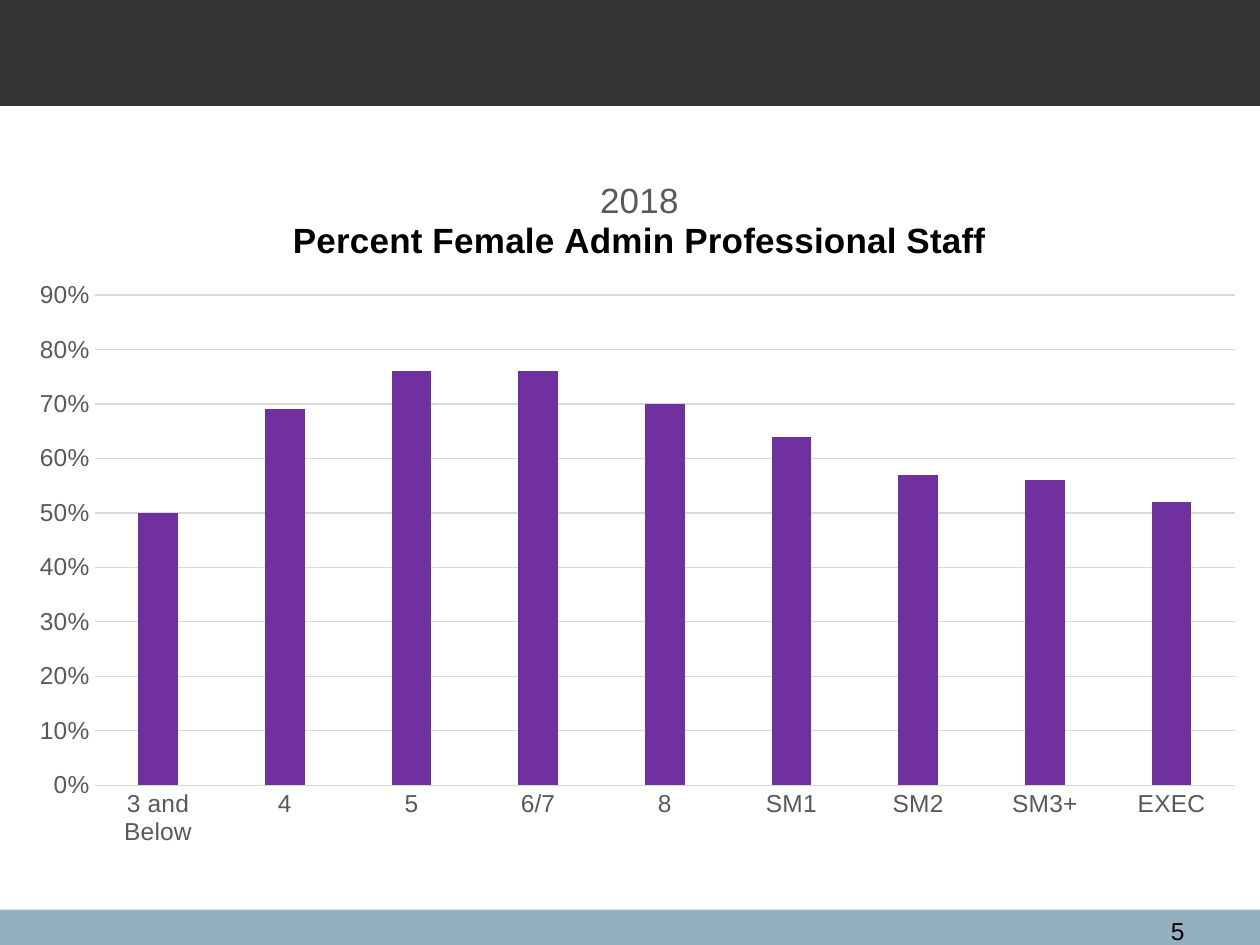
import pptx
import pptx.chart.data
import pptx.dml.color
import pptx.enum.chart
import pptx.enum.shapes
import pptx.enum.text
import pptx.oxml
import pptx.oxml.ns
import pptx.util
from pptx.util import Inches

COLORS = {
    "band": "333333",
    "footer": "94B0BE",
    "paper": "FFFFFF",
    "text": "000000",
    "muted": "595959",
    "grid": "D9D9D9",
    "bar": "7030A0",
}
FONT = "Arial"
STAFF_SHARES = {
    "3 and Below": 0.5,
    "4": 0.69,
    "5": 0.76,
    "6/7": 0.76,
    "8": 0.7,
    "SM1": 0.64,
    "SM2": 0.57,
    "SM3+": 0.56,
    "EXEC": 0.52,
}


def color(name):
    return pptx.dml.color.RGBColor.from_string(COLORS[name])


def set_values(target, values):
    for name, value in values.items():
        setattr(target, name, value)


def format_font(font, size, color_name, bold=False):
    set_values(font, {"name": FONT, "size": pptx.util.Pt(size), "bold": bold})
    font.color.rgb = color(color_name)


def format_line(line):
    line.color.rgb = color("grid")
    line.width = pptx.util.Pt(0.75)


def add_band(page, box, color_name):
    band = page.shapes.add_shape(pptx.enum.shapes.MSO_SHAPE.RECTANGLE, *box)
    band.shadow.inherit = False
    band.fill.solid()
    band.fill.fore_color.rgb = color(color_name)
    band.line.fill.background()


def add_page_number(page, box, number):
    frame = page.shapes.add_textbox(*box).text_frame
    frame.word_wrap = True
    para = frame.paragraphs[0]
    para.alignment = pptx.enum.text.PP_ALIGN.RIGHT
    span = para.add_run()
    span.text = number
    format_font(span.font, 14, "text")


def set_layout(parent, fractions, inner=False):
    for old in parent.findall(pptx.oxml.ns.qn("c:layout")):
        parent.remove(old)
    target = '<c:layoutTarget val="inner"/>' if inner else ""
    modes = "".join(f'<c:{key}Mode val="edge"/>' for key in "xy")
    sizes = "".join(f'<c:{key} val="{value}"/>' for key, value in fractions.items())
    layout = pptx.oxml.parse_xml(
        f'<c:layout {pptx.oxml.ns.nsdecls("c")}><c:manualLayout>'
        f"{target}{modes}{sizes}</c:manualLayout></c:layout>"
    )
    parent.insert(1 if parent.find(pptx.oxml.ns.qn("c:tx")) is not None else 0, layout)


def add_title(chart):
    frame = chart.chart_title.text_frame
    lines = [("2018", "muted", False),
             ("Percent Female Admin Professional Staff", "text", True)]
    for index, (text, color_name, bold) in enumerate(lines):
        para = frame.add_paragraph() if index else frame.paragraphs[0]
        para.alignment = pptx.enum.text.PP_ALIGN.CENTER
        span = para.add_run()
        span.text = text
        format_font(span.font, 20, color_name, bold)
    chart.chart_title.include_in_layout = False
    set_layout(chart.chart_title._element, {"x": 0.22, "y": 0.03})


def add_staff_chart(page, box):
    data = pptx.chart.data.CategoryChartData(number_format="0%")
    data.categories = list(STAFF_SHARES)
    data.add_series("Series 1", list(STAFF_SHARES.values()))
    kind = pptx.enum.chart.XL_CHART_TYPE.COLUMN_CLUSTERED
    chart = page.shapes.add_chart(kind, *box, data).chart
    chart.has_legend = False
    format_font(chart.font, 10, "text")
    add_title(chart)
    set_layout(chart._chartSpace.chart.plotArea,
               {"x": 0.064, "y": 0.199, "w": 0.916, "h": 0.696}, inner=True)

    plot = chart.plots[0]
    set_values(plot, {"gap_width": 219, "overlap": -27, "vary_by_categories": False})
    fill = plot.series[0].format.fill
    fill.solid()
    fill.fore_color.rgb = color("bar")

    no_mark = pptx.enum.chart.XL_TICK_MARK.NONE
    for axis in (chart.category_axis, chart.value_axis):
        set_values(axis, {"major_tick_mark": no_mark, "minor_tick_mark": no_mark})
        format_font(axis.tick_labels.font, 14, "muted")
    format_line(chart.category_axis.format.line)

    values = chart.value_axis
    set_values(values, {"minimum_scale": 0, "maximum_scale": 0.9,
                        "major_unit": 0.1, "has_major_gridlines": True})
    set_values(values.tick_labels, {"number_format": "0%",
                                    "number_format_is_linked": False})
    values.format.line.fill.background()
    format_line(values.major_gridlines.format.line)


def main():
    deck = pptx.Presentation()
    set_values(deck, {"slide_width": Inches(10), "slide_height": Inches(7.5)})
    page = deck.slides.add_slide(deck.slide_layouts[6])
    page.background.fill.solid()
    page.background.fill.fore_color.rgb = color("paper")
    add_band(page, (0, Inches(7.22), deck.slide_width, Inches(0.28)), "footer")
    add_band(page, (0, 0, deck.slide_width, Inches(0.84)), "band")
    add_page_number(page, (Inches(8.86), Inches(7.22), Inches(0.64), Inches(0.24)), "5")
    add_staff_chart(page, (Inches(0.12), Inches(1.23), Inches(9.88), Inches(5.59)))
    deck.save("out.pptx")


if __name__ == "__main__":
    main()
